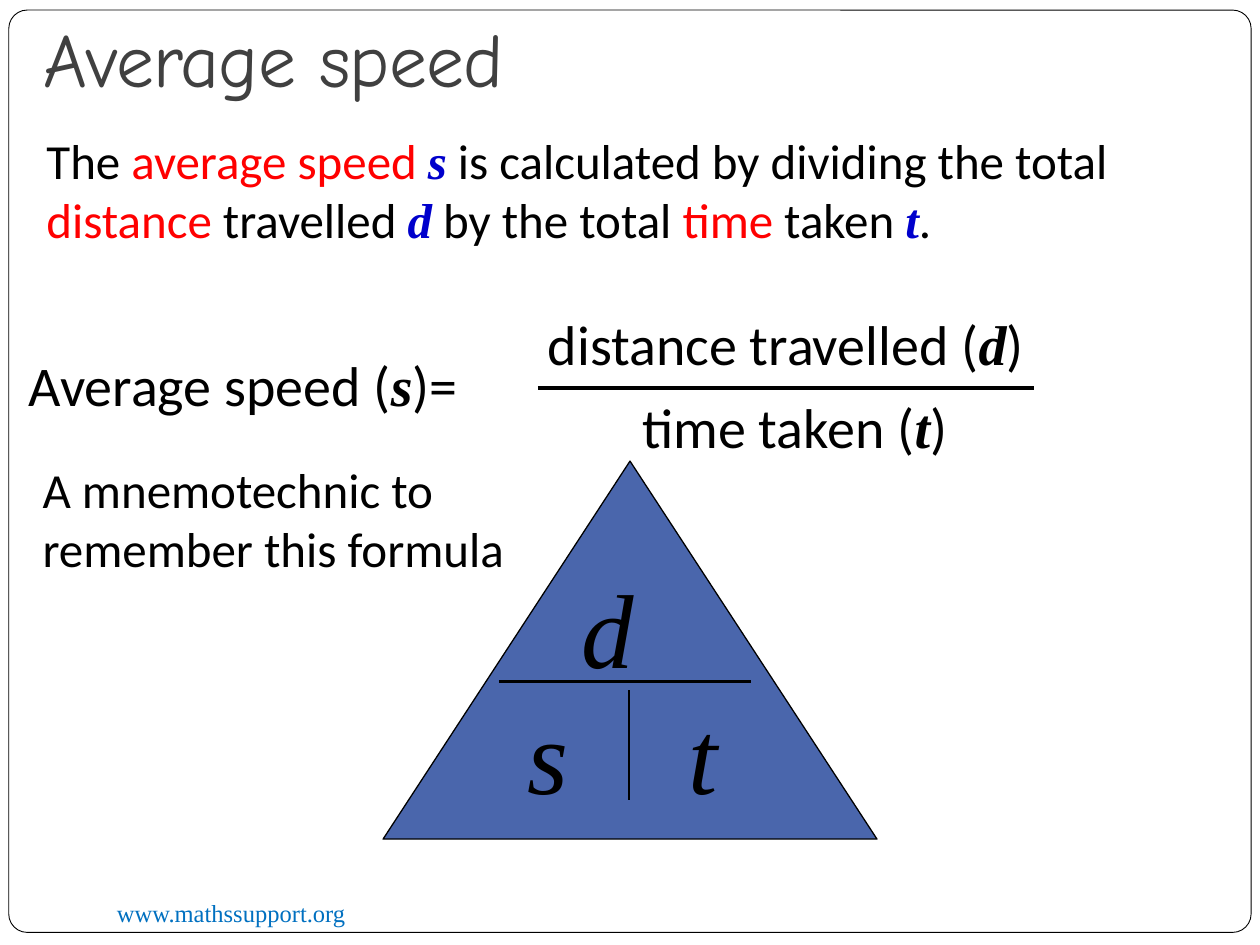
"""Build the average speed slide with its formula and memory triangle."""
from lxml import etree
from pptx import Presentation
from pptx.dml.color import RGBColor
from pptx.enum import shapes, text
from pptx.oxml.ns import qn
from pptx.util import Inches, Pt

INK = {"black": "000000", "white": "FFFFFF", "red": "FF0000", "navy": "0000CC",
       "grey": "404040", "link": "0070C0", "blue": "4A66AC"}
SANS, SERIF, COMIC = "Calibri", "Times New Roman", "Comic Neue"

PLAIN = (SANS, "black", False, False)
KEY = (SANS, "red", False, False)
SIGN = (SERIF, "navy", True, True)
BOLD = (SERIF, "black", True, True)
SLANT = (SERIF, "black", False, True)
LINK = (SERIF, "link", False, False)
HEAD = (COMIC, "grey", False, False)

RULE = [("The ", PLAIN), ("average speed ", KEY), ("s", SIGN),
        (" is calculated by dividing the total ", PLAIN), ("distance", KEY),
        (" travelled ", PLAIN), ("d", SIGN), (" by the total ", PLAIN),
        ("time", KEY), (" taken ", PLAIN), ("t", SIGN), (".", PLAIN)]
TEXTS = [
    ((0.83, 7.08, 3.25, 0.34), 14, [("www.mathssupport.org", LINK)]),
    ((0.27, 0.99, 9.45, 1.04), 28, RULE),
    ((0.24, 3.6, 4.1, 1.04), 28,
     [("A mnemotechnic to remember this formula", PLAIN)]),
]
TERMS = [
    ((0.13, 2.73, 3.74, 0.64), "Average speed (", "s", ")="),
    ((4.25, 2.41, 4.03, 0.64), "distance travelled (", "d", ")"),
    ((5, 3.07, 2.68, 0.64), "time taken (", "t", ")"),
]
SIGNS = [("s", 4.09, 5.33), ("t", 5.37, 5.33), ("d", 4.52, 4.33)]
LINES = [((3.96, 5.41, 5.96, 5.41), 1.5), ((4.27, 3.08, 8.21, 3.08), 2.25),
         ((4.99, 5.48, 4.99, 6.35), 1.25)]


def tint(name):
    return RGBColor.from_string(INK[name])


def inch(nums):
    return [Inches(n) for n in nums]


def add_form(slide, kind, box, fill, width):
    form = slide.shapes.add_shape(kind, *inch(box))
    form.shadow.inherit = False
    form.fill.solid()
    form.fill.fore_color.rgb = tint(fill)
    form.line.color.rgb = tint("black")
    form.line.width = Pt(width)
    return form


def add_text(slide, box, size, runs, wrap=True):
    frame = slide.shapes.add_textbox(*inch(box)).text_frame
    frame.word_wrap = wrap
    para = frame.paragraphs[0]
    for words, (face, hue, bold, slant) in runs:
        run = para.add_run()
        run.text = words
        font = run.font
        font.name, font.size = face, Pt(size)
        font.bold, font.italic = bold, slant
        font.color.rgb = tint(hue)
    return frame


def add_line(slide, ends, width):
    line = slide.shapes.add_connector(shapes.MSO_CONNECTOR.STRAIGHT, *inch(ends))
    line.line.color.rgb = tint("black")
    line.line.width = Pt(width)
    etree.SubElement(line._element.spPr, qn("a:effectLst"))


def main():
    deck = Presentation()
    deck.slide_width, deck.slide_height = Inches(10), Inches(7.5)
    slide = deck.slides.add_slide(deck.slide_layouts[6])

    kinds = shapes.MSO_SHAPE
    card = add_form(slide, kinds.ROUNDED_RECTANGLE, (0.07, 0.08, 9.86, 7.32),
                    "white", 0.5)
    card.adjustments[0] = 0.02
    add_form(slide, kinds.ISOSCELES_TRIANGLE, (3.04, 3.66, 3.92, 3), "blue", 0.75)

    title = add_text(slide, (0.25, 0.19, 9, 0.68), 43.2, [("Average speed", HEAD)])
    title.vertical_anchor = text.MSO_ANCHOR.MIDDLE
    para = title.paragraphs[0]
    para.line_spacing = 0.75
    para.runs[0].font._element.set("spc", "-50")

    for box, size, runs in TEXTS:
        add_text(slide, box, size, runs)
    for box, start, sign, end in TERMS:
        add_text(slide, box, 32, [(start, PLAIN), (sign, BOLD), (end, PLAIN)], False)
    for sign, left, top in SIGNS:
        frame = add_text(slide, (left, top, 0.67, 1.1), 60, [(sign, SLANT)])
        frame.margin_top = Inches(0.14)
    for ends, width in LINES:
        add_line(slide, ends, width)

    deck.save("out.pptx")


if __name__ == "__main__":
    main()
